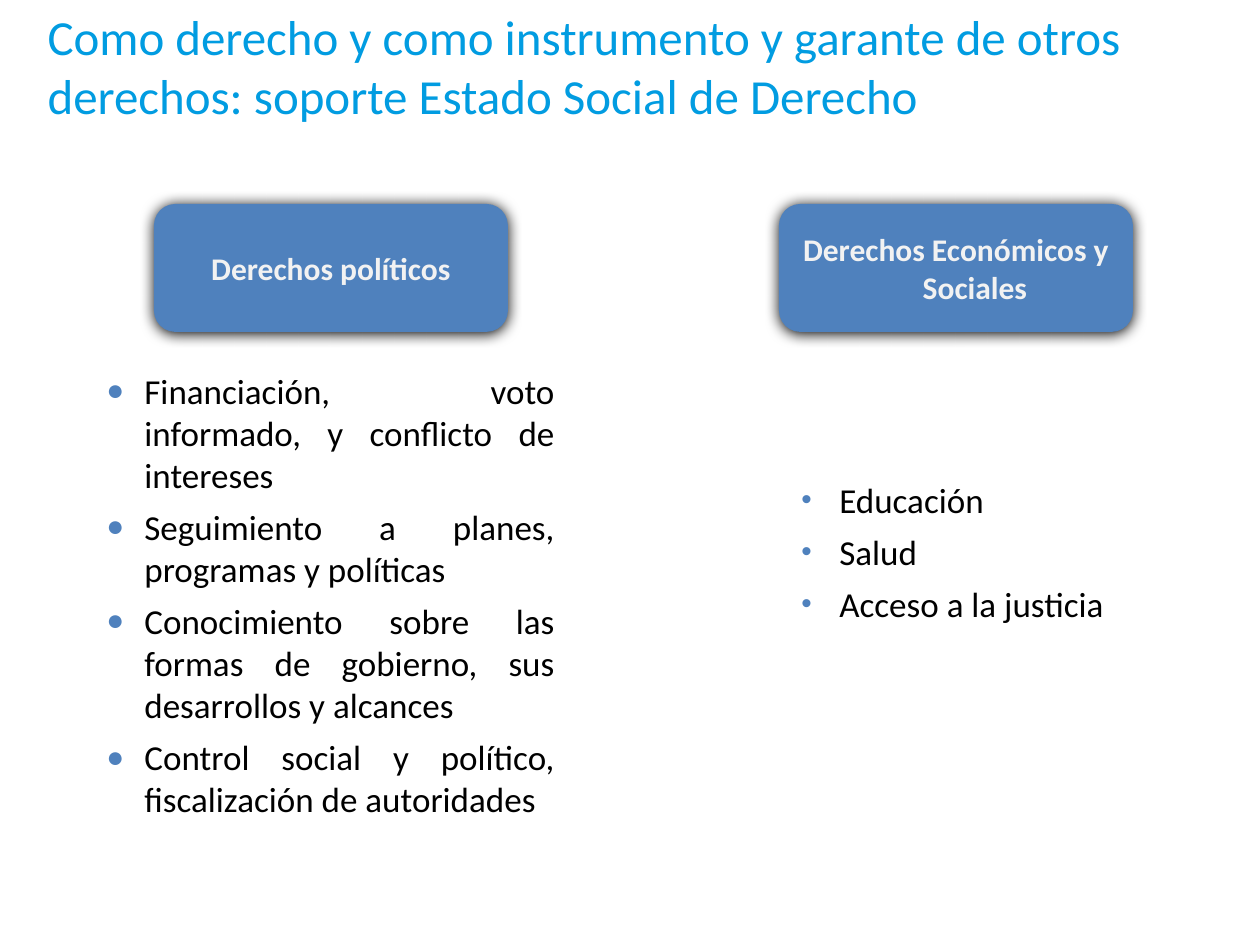
from dataclasses import dataclass

from lxml.etree import SubElement
from pptx import Presentation
from pptx.dml.color import RGBColor as RGB
from pptx.enum.shapes import MSO_SHAPE as Shape
from pptx.enum.text import MSO_ANCHOR as Anchor, MSO_AUTO_SIZE as AutoSize, PP_ALIGN as Align
from pptx.oxml.ns import qn
from pptx.util import Pt

EMU_PER_PX = 914400 / 126
HANG = 38  # hanging indent of headings and bullets


@dataclass(frozen=True)
class Theme:
    font: str = "Calibri"
    title: str = "019CE1"
    accent: str = "4F81BD"
    heading: str = "F2F2F2"
    body: str = "000000"
    shadow: str = "000000"
    title_size: int = 28
    heading_size: int = 18
    body_size: int = 20
    gap: float = 5.8


THEME = Theme()


def px(n):
    return round(n * EMU_PER_PX)


def format_runs(p, size, color, bold=False):
    for r in p.runs:
        r.font.name = THEME.font
        r.font.size = Pt(size)
        r.font.bold = bold
        r.font.color.rgb = RGB.from_string(color)


def hang(p):
    pPr = p._p.get_or_add_pPr()
    pPr.set("marL", str(px(HANG)))
    pPr.set("indent", str(-px(HANG)))
    return pPr


def add_bullet(p, char):
    pPr = hang(p)
    SubElement(SubElement(pPr, qn("a:buClr")), qn("a:srgbClr"), val=THEME.accent)
    SubElement(pPr, qn("a:buSzPct"), val="85000")
    SubElement(pPr, qn("a:buFont"), typeface="Arial")
    SubElement(pPr, qn("a:buChar"), char=char)


def add_shadow(sp):
    sp.shadow.inherit = False
    effects = sp._element.spPr.find(qn("a:effectLst"))
    outer = SubElement(effects, qn("a:outerShdw"), blurRad=str(Pt(8.5)), dist=str(Pt(1)),
                       dir="5400000", algn="ctr", rotWithShape="0")
    SubElement(outer, qn("a:srgbClr"), val=THEME.shadow)


def set_title(slide, box, text):
    sp = slide.shapes.title
    sp.left, sp.top, sp.width, sp.height = map(px, box)
    tf = sp.text_frame
    tf.text = text
    tf.word_wrap = True
    tf.auto_size = AutoSize.NONE
    tf.vertical_anchor = Anchor.TOP
    p = tf.paragraphs[0]
    p.alignment = Align.LEFT
    format_runs(p, THEME.title_size, THEME.title)


def add_heading(slide, box, text):
    sp = slide.shapes.add_shape(Shape.ROUNDED_RECTANGLE, *map(px, box))
    sp.fill.solid()
    sp.fill.fore_color.rgb = RGB.from_string(THEME.accent)
    sp.line.fill.background()
    add_shadow(sp)
    tf = sp.text_frame
    tf.text = text
    tf.word_wrap = True
    tf.vertical_anchor = Anchor.MIDDLE
    p = tf.paragraphs[0]
    p.alignment = Align.CENTER
    hang(p)
    format_runs(p, THEME.heading_size, THEME.heading, bold=True)


def add_bullets(slide, box, items, char):
    tf = slide.shapes.add_textbox(*map(px, box)).text_frame
    tf.word_wrap = True
    tf.text = "\n".join(items)
    for i, p in enumerate(tf.paragraphs):
        add_bullet(p, char)
        p.alignment = Align.JUSTIFY
        if i:
            p.space_before = Pt(THEME.gap)
        format_runs(p, THEME.body_size, THEME.body)


def add_column(slide, box, heading, items, char, list_box):
    """Heading at the top of the box; list_box is relative to the box corner."""
    x, y, w, h = box
    dx, dy, list_w, list_h = list_box
    add_heading(slide, (x, y, w, h), heading)
    add_bullets(slide, (x + dx, y + dy, list_w, list_h), items, char)


def main():
    prs = Presentation()
    prs.slide_width, prs.slide_height = px(1260), px(945)
    slide = prs.slides.add_slide(prs.slide_layouts[5])

    set_title(slide, (35, 0, 1160, 131),
              "Como derecho y como instrumento y garante de otros derechos: "
              "soporte Estado Social de Derecho")

    # Left column: political rights
    add_column(slide, (154, 204, 354, 128), "Derechos políticos", [
        "Financiación, voto informado, y conflicto de intereses",
        "Seguimiento a planes, programas y políticas",
        "Conocimiento sobre las formas de gobierno, sus desarrollos y alcances",
        "Control social y político, fiscalización de autoridades",
    ], "●", (-60, 159, 473, 469))

    # Right column: economic and social rights
    add_column(slide, (779, 204, 354, 128), "Derechos Económicos y Sociales", [
        "Educación", "Salud", "Acceso a la justicia",
    ], "•", (10, 268, 354, 178))

    prs.save("out.pptx")


if __name__ == "__main__":
    main()
